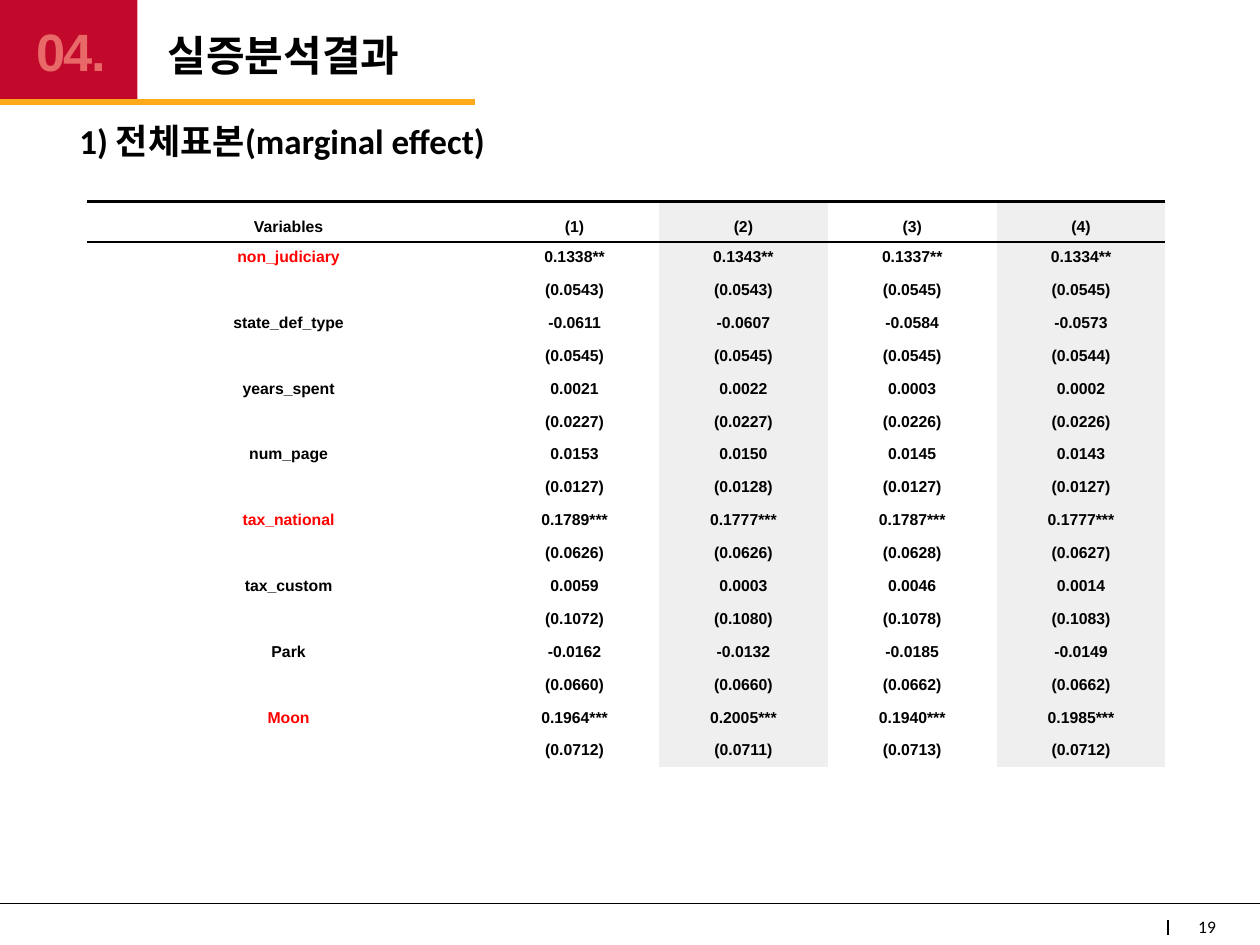
from lxml import etree
from pptx import Presentation
from pptx.dml.color import RGBColor
from pptx.enum import shapes, text
from pptx.oxml import ns
from pptx.util import Inches, Pt

BLACK = RGBColor(0x00, 0x00, 0x00)
WHITE = RGBColor(0xFF, 0xFF, 0xFF)
CRIMSON = RGBColor(0xC3, 0x09, 0x2B)
SALMON = RGBColor(0xE9, 0x68, 0x68)
AMBER = RGBColor(0xFF, 0xAB, 0x19)
RED = RGBColor(0xFF, 0x00, 0x00)
GREY = RGBColor(0xEF, 0xEF, 0xEF)

PLAIN_STYLE = "{2D5ABB26-0587-4C30-8999-92F81FD0307C}"
COLUMN_WIDTHS = [3.2, 1.34, 1.34, 1.34, 1.34]
HEADINGS = ["Variables", "(1)", "(2)", "(3)", "(4)"]
SIGNIFICANT = {"non_judiciary", "tax_national", "Moon"}
ESTIMATES = [
    ["non_judiciary", "0.1338**", "0.1343**", "0.1337**", "0.1334**"],
    ["", "(0.0543)", "(0.0543)", "(0.0545)", "(0.0545)"],
    ["state_def_type", "-0.0611", "-0.0607", "-0.0584", "-0.0573"],
    ["", "(0.0545)", "(0.0545)", "(0.0545)", "(0.0544)"],
    ["years_spent", "0.0021", "0.0022", "0.0003", "0.0002"],
    ["", "(0.0227)", "(0.0227)", "(0.0226)", "(0.0226)"],
    ["num_page", "0.0153", "0.0150", "0.0145", "0.0143"],
    ["", "(0.0127)", "(0.0128)", "(0.0127)", "(0.0127)"],
    ["tax_national", "0.1789***", "0.1777***", "0.1787***", "0.1777***"],
    ["", "(0.0626)", "(0.0626)", "(0.0628)", "(0.0627)"],
    ["tax_custom", "0.0059", "0.0003", "0.0046", "0.0014"],
    ["", "(0.1072)", "(0.1080)", "(0.1078)", "(0.1083)"],
    ["Park", "-0.0162", "-0.0132", "-0.0185", "-0.0149"],
    ["", "(0.0660)", "(0.0660)", "(0.0662)", "(0.0662)"],
    ["Moon", "0.1964***", "0.2005***", "0.1940***", "0.1985***"],
    ["", "(0.0712)", "(0.0711)", "(0.0713)", "(0.0712)"],
]

prs = Presentation()
prs.slide_width, prs.slide_height = Inches(10), Inches(7.5)
slide = prs.slides.add_slide(prs.slide_layouts[6])


def add_run(paragraph, wording, size, font, color, bold=True):
    run = paragraph.add_run()
    run.text = wording
    run.font.size, run.font.name, run.font.bold = Pt(size), font, bold
    run.font.color.rgb = color
    return run


def add_results(top, height, rows, line_spacing):
    frame = slide.shapes.add_table(len(rows), len(COLUMN_WIDTHS), Inches(0.69),
                                   Inches(top), Inches(8.54), Inches(height))
    grid = frame.table
    grid.first_row = grid.horz_banding = False
    grid._tbl.tblPr.find(ns.qn("a:tableStyleId")).text = PLAIN_STYLE
    for column, width in zip(grid.columns, COLUMN_WIDTHS):
        column.width = Inches(width)
    for r, values in enumerate(rows):
        for c, value in enumerate(values):
            cell = grid.cell(r, c)
            cell.vertical_anchor = text.MSO_ANCHOR.MIDDLE
            cell.margin_top = cell.margin_bottom = Inches(0.04)
            if c in (2, 4):
                cell.fill.solid()
                cell.fill.fore_color.rgb = GREY
            else:
                cell.fill.background()
            paragraph = cell.text_frame.paragraphs[0]
            paragraph.alignment = text.PP_ALIGN.CENTER
            paragraph.line_spacing = line_spacing
            if value:
                add_run(paragraph, value, 9, "Arial", RED if value in SIGNIFICANT else BLACK)
            else:
                etree.SubElement(paragraph._p, ns.qn("a:endParaRPr"), sz="900")
    return grid


for left, top, width, height, color in [(0, 0, 1.09, 0.81, CRIMSON), (7.02, 7.25, 2.05, 0.25, WHITE)]:
    block = slide.shapes.add_shape(shapes.MSO_SHAPE.RECTANGLE, Inches(left), Inches(top),
                                   Inches(width), Inches(height))
    block.shadow.inherit = False
    block.fill.solid()
    block.fill.fore_color.rgb = color
    block.line.fill.background()

for x1, y1, x2, y2, color, weight in [
    (10, 7.17, 0, 7.17, BLACK, 0.25),
    (0, 0.81, 3.77, 0.81, AMBER, 3),
    (9.27, 7.3, 9.27, 7.42, BLACK, 1.25),
]:
    rule = slide.shapes.add_connector(shapes.MSO_CONNECTOR.STRAIGHT, Inches(x1), Inches(y1),
                                      Inches(x2), Inches(y2))
    rule.line.color.rgb = color
    rule.line.width = Pt(weight)
    etree.SubElement(rule._element.spPr, ns.qn("a:effectLst"))

LEFT, RIGHT = text.PP_ALIGN.LEFT, text.PP_ALIGN.RIGHT
TOP, MIDDLE = text.MSO_ANCHOR.TOP, text.MSO_ANCHOR.MIDDLE
for wording, box, size, font, color, bold, align, anchor, spacing, before in [
    ("실증분석결과", (1.24, 0.11, 6.54, 0.7), 24, "Calibri", BLACK, True, LEFT, MIDDLE, 0.9, 0),
    ("1) 전체표본(marginal effect)", (0.54, 0.95, 7.77, 0.53), 20, "Calibri", BLACK, True, LEFT, TOP, 0.9, 10),
    ("04.", (0.14, 0.11, 0.79, 0.62), 30, "Arial", SALMON, True, RIGHT, TOP, 1.0, 0),
    ("19", (9.37, 7.23, 0.37, 0.25), 10, "Calibri", BLACK, False, RIGHT, TOP, 1.0, 0),
]:
    label = slide.shapes.add_textbox(*map(Inches, box)).text_frame
    label.word_wrap = True
    label.vertical_anchor = anchor
    label.margin_left = label.margin_right = Inches(0.09)
    label.margin_top = label.margin_bottom = Inches(0.04)
    paragraph = label.paragraphs[0]
    paragraph.alignment = align
    paragraph.line_spacing = spacing
    paragraph.space_before = Pt(before)
    run = add_run(paragraph, wording, size, font, color, bold)
    if wording == "04.":
        run.font._element.set("spc", "-90")

add_results(1.91, 4.18, ESTIMATES, 1.0)
header = add_results(1.6, 0.32, [HEADINGS], 1.6)
for cell in header.iter_cells():
    properties = cell._tc.get_or_add_tcPr()
    for position, edge in enumerate(["a:lnT", "a:lnB"]):
        border = etree.Element(ns.qn(edge), w=str(Pt(1.7)))
        ink = etree.SubElement(border, ns.qn("a:solidFill"))
        etree.SubElement(ink, ns.qn("a:srgbClr"), val=str(BLACK))
        properties.insert(position, border)

prs.save("out.pptx")
